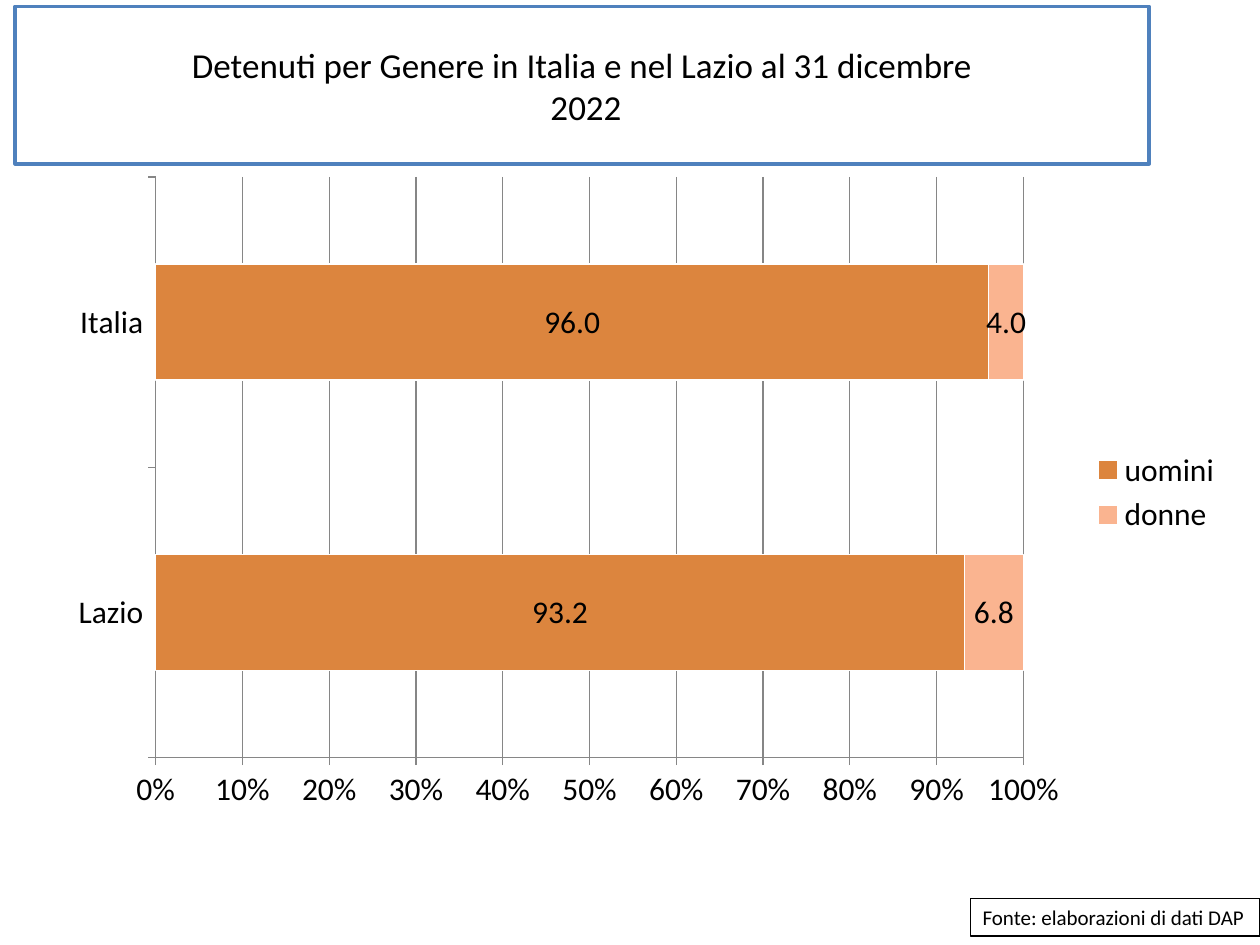
from lxml import etree
from pptx import Presentation
from pptx.chart.data import CategoryChartData
from pptx.dml.color import RGBColor
from pptx.enum.chart import XL_CHART_TYPE, XL_LABEL_POSITION, XL_LEGEND_POSITION, XL_TICK_MARK
from pptx.enum.text import MSO_ANCHOR, PP_ALIGN
from pptx.oxml import parse_xml
from pptx.oxml.ns import nsdecls, qn
from pptx.util import Inches, Pt

STACKED_BAR = XL_CHART_TYPE.BAR_STACKED_100
LABEL_CENTER = XL_LABEL_POSITION.CENTER
LEGEND_RIGHT = XL_LEGEND_POSITION.RIGHT
TICK_OUTSIDE = XL_TICK_MARK.OUTSIDE
MIDDLE = MSO_ANCHOR.MIDDLE
CENTER = PP_ALIGN.CENTER

BLACK = RGBColor(0x00, 0x00, 0x00)
WHITE = RGBColor(0xFF, 0xFF, 0xFF)
BLUE = RGBColor(0x4F, 0x81, 0xBD)
ORANGE = RGBColor(0xDC, 0x85, 0x3E)
PEACH = RGBColor(0xFA, 0xB4, 0x90)
GRAY = RGBColor(0x86, 0x86, 0x86)
FONT = "Calibri"


def style_font(font, size):
    font.name = FONT
    font.size = Pt(size)
    font.bold = False
    font.color.rgb = BLACK


def style_box(box, line_color, line_width):
    box.fill.solid()
    box.fill.fore_color.rgb = WHITE
    box.line.color.rgb = line_color
    box.line.width = Pt(line_width)


deck = Presentation()
deck.slide_width = Inches(10)
deck.slide_height = Inches(7.5)
slide = deck.slides.add_slide(deck.slide_layouts[5])

# Title
title = slide.shapes.title
title.left, title.top = Inches(0.12), Inches(0.05)
title.width, title.height = Inches(9), Inches(1.25)
style_box(title, BLUE, 2)
title.text_frame.vertical_anchor = MIDDLE
para = title.text_frame.paragraphs[0]
para.alignment = CENTER
for index, text in enumerate(["Detenuti per Genere in Italia e nel Lazio al 31 dicembre", " 2022"]):
    if index:
        para.add_line_break()
    span = para.add_run()
    span.text = text
    style_font(span.font, 20)

# Source note
note = slide.shapes.add_textbox(Inches(7.7), Inches(7.13), Inches(2.3), Inches(0.3))
style_box(note, BLACK, 0.75)
note.text_frame.word_wrap = False
span = note.text_frame.paragraphs[0].add_run()
span.text = "Fonte: elaborazioni di dati DAP"
style_font(span.font, 12)

# Chart of prisoners by gender
data = CategoryChartData(number_format="0.0")
data.categories = ["Lazio", "Italia"]
data.add_series("uomini", [93.2, 96.0])
data.add_series("donne", [6.8, 4.0])
chart = slide.shapes.add_chart(
    STACKED_BAR, Inches(0.43), Inches(1.3), Inches(9.37), Inches(5.22), data
).chart
chart.has_title = False
style_font(chart.font, 18)
chart.has_legend = True
chart.legend.position = LEGEND_RIGHT
chart.legend.include_in_layout = False

# Bars and their values
plot = chart.plots[0]
plot.gap_width = 150
plot.overlap = 100
plot.vary_by_categories = False
for series, color in zip(plot.series, [ORANGE, PEACH]):
    series.format.fill.solid()
    series.format.fill.fore_color.rgb = color
    series.format.line.color.rgb = WHITE
    series.format.line.width = Pt(0.75)
    labels = series.data_labels
    labels.show_value = True
    labels.position = LABEL_CENTER
    labels.number_format = "0.0"
    labels.number_format_is_linked = False
    style_font(labels.font, 18)

# Axes
for axis in (chart.category_axis, chart.value_axis):
    axis.major_tick_mark = TICK_OUTSIDE
    axis.format.line.color.rgb = GRAY
    style_font(axis.tick_labels.font, 18)
percent_axis = chart.value_axis
percent_axis.minimum_scale = 0
percent_axis.has_major_gridlines = True
percent_axis.major_gridlines.format.line.color.rgb = GRAY
percent_axis.tick_labels.number_format = "0%"
percent_axis.tick_labels.number_format_is_linked = False

# Fixed place of the plot area inside the chart
plot_area = chart._chartSpace.chart.plotArea
for old_layout in plot_area.findall(qn("c:layout")):
    plot_area.remove(old_layout)
layout = parse_xml(f"<c:layout {nsdecls('c')}/>")
manual = etree.SubElement(layout, qn("c:manualLayout"))
for tag, value in [("layoutTarget", "inner"), ("xMode", "edge"), ("yMode", "edge"),
                   ("x", "0.086"), ("y", "0.02"), ("w", "0.735"), ("h", "0.883")]:
    etree.SubElement(manual, qn(f"c:{tag}")).set("val", value)
plot_area.insert(0, layout)

deck.save("out.pptx")
